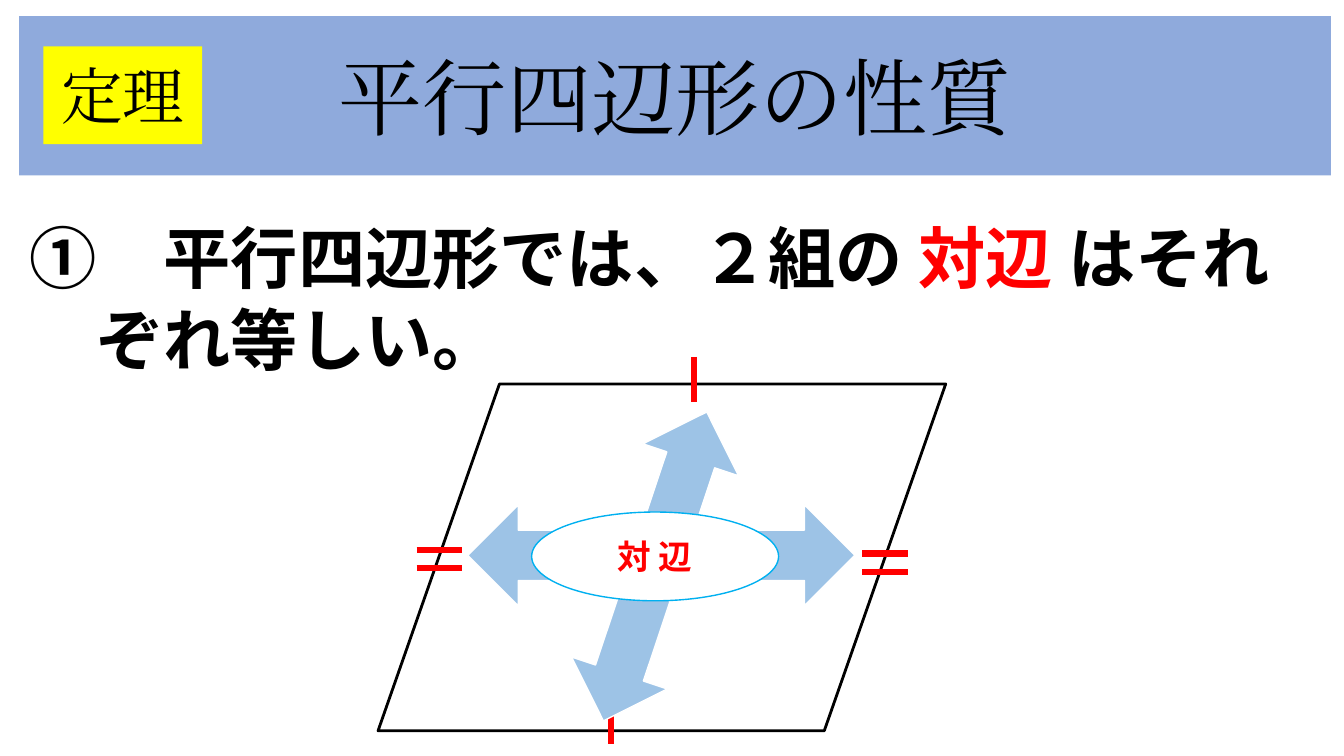
from lxml import etree
from pptx import Presentation
from pptx.dml.color import RGBColor
from pptx.enum.lang import MSO_LANGUAGE_ID
from pptx.enum.shapes import MSO_CONNECTOR, MSO_SHAPE
from pptx.enum.text import MSO_ANCHOR, MSO_AUTO_SIZE, PP_ALIGN
from pptx.oxml.ns import qn
from pptx.util import Inches, Pt

BLACK = RGBColor(0x00, 0x00, 0x00)
WHITE = RGBColor(0xFF, 0xFF, 0xFF)
RED = RGBColor(0xFF, 0x00, 0x00)
YELLOW = RGBColor(0xFF, 0xFF, 0x00)
BANNER_BLUE = RGBColor(0x8F, 0xAA, 0xDC)
ARROW_BLUE = RGBColor(0x9D, 0xC3, 0xE6)
OUTLINE_BLUE = RGBColor(0x00, 0xB0, 0xF0)
SERIF, GOTHIC = "Cambria", "Noto Sans CJK JP"
LEFT, CENTER = PP_ALIGN.LEFT, PP_ALIGN.CENTER
MIDDLE = MSO_ANCHOR.MIDDLE
NO_FIT = MSO_AUTO_SIZE.NONE
JAPANESE = MSO_LANGUAGE_ID.JAPANESE
STRAIGHT = MSO_CONNECTOR.STRAIGHT
RECT, OVAL = MSO_SHAPE.RECTANGLE, MSO_SHAPE.OVAL
PARALLELOGRAM = MSO_SHAPE.PARALLELOGRAM
DOUBLE_ARROW = MSO_SHAPE.LEFT_RIGHT_ARROW
TICK = 0.45
TICK_GAP = 0.18


def place(sp, box):
    """Move and size a shape to a box in inches."""
    sp.left, sp.top, sp.width, sp.height = (Inches(v) for v in box)


def centred(box, cx, cy, w, h):
    """Return a box from its centre and size in percent of another box."""
    x, y, bw, bh = box
    return (x + bw * (cx - w / 2) / 100, y + bh * (cy - h / 2) / 100,
            bw * w / 100, bh * h / 100)


def write(sp, lines, size, font, color=BLACK, bold=False, align=CENTER,
          wrap=True, spacing=None):
    """Fill a shape with lines, each a list of (text, colour or None) runs."""
    tf = sp.text_frame
    tf.auto_size, tf.word_wrap, tf.vertical_anchor = NO_FIT, wrap, MIDDLE
    for i, runs in enumerate(lines):
        p = tf.add_paragraph() if i else tf.paragraphs[0]
        p.alignment, p.space_before, p.line_spacing = align, Pt(0), spacing
        for text, run_color in runs:
            r = p.add_run()
            r.text = text
            r.font.size, r.font.bold, r.font.name = Pt(size), bold, font
            r.font.language_id = JAPANESE
            r.font.color.rgb = run_color or color
            ea = etree.Element(qn("a:ea"), typeface=font)
            r.font._element.find(qn("a:latin")).addnext(ea)


def add_shape(s, kind, box, fill=None, line=None, width=1, rotation=0):
    """Add a flat preset shape."""
    sp = s.shapes.add_shape(kind, *(Inches(v) for v in box))
    sp.shadow.inherit = False
    sp.rotation = rotation
    if fill is None:
        sp.fill.background()
    else:
        sp.fill.solid()
        sp.fill.fore_color.rgb = fill
    if line is None:
        sp.line.fill.background()
    else:
        sp.line.color.rgb, sp.line.width = line, Pt(width)
    return sp


def add_tick(s, cx, cy, dx, dy):
    """Add a red tick centred on a point."""
    ends = (cx - dx / 2, cy - dy / 2, cx + dx / 2, cy + dy / 2)
    c = s.shapes.add_connector(STRAIGHT, *(Inches(v) for v in ends))
    c.line.color.rgb, c.line.width = RED, Pt(4.5)
    etree.SubElement(c._element.spPr, qn("a:effectLst"))


def add_banner(s, box):
    """Format the title as a banner with the theorem badge."""
    title = s.shapes.title
    place(title, box)
    title.fill.solid()
    title.fill.fore_color.rgb = BANNER_BLUE
    write(title, [[("平行四辺形の性質", None)]], 60, SERIF, wrap=False)
    badge = add_shape(s, RECT, centred(box, 7.9, 49.7, 12.1, 61.4), YELLOW)
    write(badge, [[("定理", None)]], 44, SERIF, wrap=False)


def add_statement(s, box):
    """Write the theorem in the body placeholder."""
    body = s.placeholders[1]
    place(body, box)
    write(body, [[("①　平行四辺形では、２組の ", None), ("対辺 ", RED), ("はそれ", None)],
                 [("　ぞれ等しい。", None)]],
          48, GOTHIC, bold=True, align=LEFT, spacing=Pt(58))
    for p in body.text_frame.paragraphs:
        pPr = p._p.get_or_add_pPr()
        pPr.set("marL", "0")
        pPr.set("indent", "0")
        etree.SubElement(pPr, qn("a:buNone"))


def add_figure(s, box):
    """Draw the parallelogram, its equal-side ticks and the opposite sides."""
    x, y, w, h = box
    add_shape(s, DOUBLE_ARROW, centred(box, 49.9, 49.4, 68.2, 29.1),
              ARROW_BLUE, WHITE)
    sides = add_shape(s, PARALLELOGRAM, box, line=BLACK, width=2)
    sides.adjustments[0] = 0.35
    for cx, cy in ((55.6, -1.3), (41, 97.4)):
        add_tick(s, x + w * cx / 100, y + h * cy / 100, 0, TICK)
    for cx, cy in ((89.3, 51.5), (10.8, 50.4)):
        for side in (-0.5, 0.5):
            add_tick(s, x + w * cx / 100,
                     y + h * cy / 100 + side * TICK_GAP, TICK, 0)
    add_shape(s, DOUBLE_ARROW, centred(box, 48.8, 52.6, 57.4, 29.1),
              ARROW_BLUE, WHITE, rotation=108.5)
    label = add_shape(s, OVAL, centred(box, 48.8, 49.7, 43.5, 25.6),
                      WHITE, OUTLINE_BLUE)
    write(label, [[("対 辺", None)]], 24, GOTHIC, color=RED, bold=True)


def main():
    """Build the slide and save it."""
    prs = Presentation()
    prs.slide_width, prs.slide_height = Inches(13.33), Inches(7.5)
    s = prs.slides.add_slide(prs.slide_layouts[1])
    add_banner(s, (0.19, 0.16, 13.01, 1.58))
    add_statement(s, (0.19, 2.09, 13.01, 1.72))
    add_figure(s, (3.75, 3.81, 5.63, 3.44))
    prs.save("out.pptx")


if __name__ == "__main__":
    main()
